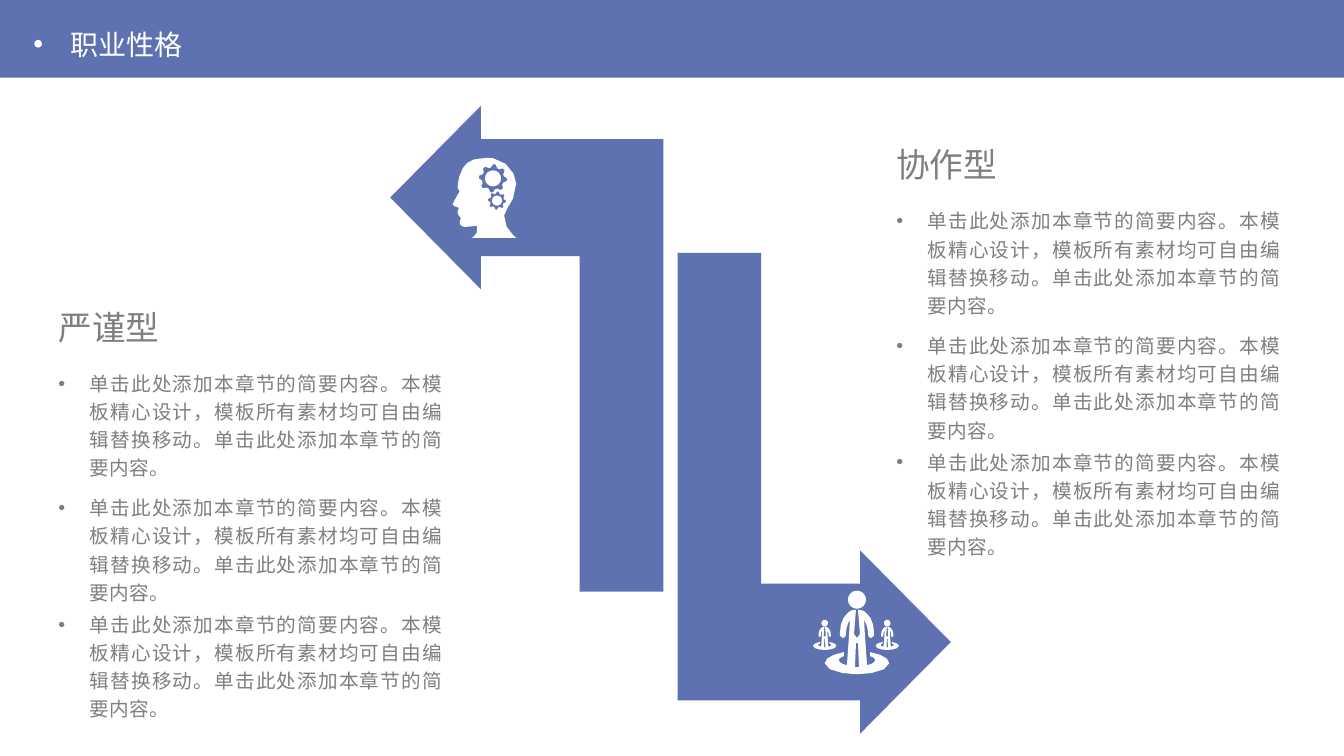
"""Build the slide on professional character with two turning arrows."""
from math import cos, pi, sin

from lxml.etree import SubElement as Sub
from pptx import Presentation
from pptx.dml.color import RGBColor as RGB
from pptx.enum.lang import MSO_LANGUAGE_ID as Lang
from pptx.enum.shapes import MSO_SHAPE as Kind
from pptx.enum.text import MSO_ANCHOR as Anchor, MSO_AUTO_SIZE as Auto, PP_ALIGN as Align
from pptx.oxml.ns import qn
from pptx.util import Inches, Pt

theme = {
    "blue": RGB(0x5E, 0x72, 0xB1), "white": RGB(255, 255, 255), "grey": RGB(0x7F, 0x7F, 0x7F),
    "font": "Noto Sans CJK SC", "title": 20, "head": 24, "body": 14,
}
cell = Inches(1)
cols, rows = 13.33, 7.5


def trace(steps, parts=3):
    """Turn corners (x, y) and cubic curves (six numbers) into points."""
    dots = [steps[0]]
    for step in steps[1:]:
        if len(step) == 2:
            dots.append(step)
            continue
        ends = [dots[-1], step[:2], step[2:4], step[4:]]
        for k in range(1, parts + 1):
            t = k / parts
            mix = ((1 - t) ** 3, 3 * t * (1 - t) ** 2, 3 * t * t * (1 - t), t ** 3)
            dots.append(tuple(sum(m * e[i] for m, e in zip(mix, ends)) for i in (0, 1)))
    return dots


def wheel(x, y, tip, root, teeth=4):
    """Return a gear outline, or a circle when both radii are equal."""
    count = 4 * teeth
    return [(x + r * cos(2 * pi * k / count), y + r * sin(2 * pi * k / count))
            for k in range(count) for r in [tip if k % 4 < 2 else root]]


deck = Presentation()
deck.slide_width, deck.slide_height = int(cols * cell), int(rows * cell)
page = deck.slides.add_slide(deck.slide_layouts.get_by_name("Comparison"))
for spot in list(page.placeholders):
    if spot.placeholder_format.idx > 4:
        spot.element.getparent().remove(spot.element)

band = page.shapes.add_shape(Kind.RECTANGLE, 0, 0, deck.slide_width, int(0.77 * cell))
band.shadow.inherit = False
band.fill.solid()
band.fill.fore_color.rgb = theme["blue"]
band.line.fill.background()
page.shapes._spTree.insert(2, band._element)

arrows = []
for side, edge, mid, tail in ((-1, 6.72, 6.37, 3.86), (1, 6.58, 1.96, 3.91)):
    bend = [(0, -0.58), (0, tail), (-0.83, tail), (-0.83, 0.58), (-1.81, 0.58),
            (-1.81, 0.91), (-2.71, 0), (-1.81, -0.91), (-1.81, -0.58)]
    arrows.append([[(edge + side * x, mid + side * y) for x, y in bend]])

face = trace([
    (4.79, 1.57), (4.82, 1.56, 4.85, 1.57, 4.89, 1.57), (5.04, 1.59, 5.12, 1.74, 5.12, 1.82),
    (5.12, 2, 5, 2.08, 5, 2.14), (4.99, 2.26, 5.12, 2.36, 5.12, 2.36), (4.68, 2.36),
    (4.68, 2.36, 4.76, 2.32, 4.73, 2.24), (4.71, 2.24, 4.67, 2.25, 4.63, 2.25),
    (4.6, 2.26, 4.57, 2.24, 4.56, 2.22), (4.56, 2.2, 4.57, 2.17, 4.57, 2.16),
    (4.56, 2.15, 4.53, 2.12, 4.54, 2.1), (4.55, 2.07, 4.55, 2.06, 4.55, 2.06),
    (4.55, 2.06, 4.5, 2.05, 4.49, 2.03), (4.49, 2.01, 4.56, 1.9, 4.56, 1.9),
    (4.56, 1.9, 4.54, 1.87, 4.54, 1.86), (4.54, 1.84, 4.54, 1.76, 4.59, 1.67),
    (4.62, 1.61, 4.69, 1.57, 4.79, 1.57)])
mind = [face]
for x, y, tip, root, bore in ((4.89, 1.77, 0.14, 0.11, 0.08), (4.93, 1.99, 0.09, 0.07, 0.05)):
    mind += [wheel(x, y, tip, root, 8), wheel(x, y, bore, bore)]

half = trace([
    (0, 0.47), (0.03, 0.43), (0.01, 0.19), (0.05, 0.19, 0.07, 0.2, 0.09, 0.22),
    (0.14, 0.26, 0.17, 0.33, 0.17, 0.43), (0.17, 0.45, 0.16, 0.46, 0.14, 0.47),
    (0.12, 0.47, 0.11, 0.45, 0.11, 0.43), (0.11, 0.37, 0.09, 0.32, 0.07, 0.29),
    (0.08, 0.46), (0.1, 0.74), (0.15, 0.73, 0.18, 0.71, 0.18, 0.69),
    (0.18, 0.67, 0.16, 0.66, 0.13, 0.65), (0.13, 0.61), (0.24, 0.63, 0.32, 0.67, 0.32, 0.72),
    (0.32, 0.79, 0.14, 0.83, 0, 0.83)])
man = [half + [(-x, y) for x, y in half[-2:0:-1]], wheel(0, 0.09, 0.09, 0.09),
       [(0.01, 0.52), (0.02, 0.76), (-0.02, 0.76), (-0.01, 0.52)]]
team = [[(left + size * x, top + size * y) for x, y in ring]
        for left, top, size in ((8.5, 5.86, 1), (8.18, 6.15, 0.36), (8.8, 6.15, 0.36))
        for ring in man]

for rings, tint in [(a, "blue") for a in arrows] + [(mind, "white"), (team, "white")]:
    pen = None
    for ring in rings:
        start, *rest = [(x * cell, y * cell) for x, y in ring]
        pen = pen.move_to(*start) if pen else page.shapes.build_freeform(*start)
        pen.add_line_segments(rest, close=True)
    form = pen.convert_to_shape()
    form.shadow.inherit = False
    form.fill.solid()
    form.fill.fore_color.rgb = theme[tint]
    form.line.fill.background()

note = "单击此处添加本章节的简要内容。本模板精心设计，模板所有素材均可自由编辑替换移动。单击此处添加本章节的简要内容。"
texts = [(0, ["职业性格"], (0.23, 0.22, 4.01, 0.44), "title", "white", 0.37)]
for idx, name, left, top in ((1, "严谨型", 0.48, 2.99), (3, "协作型", 8.79, 1.38)):
    texts += [(idx, [name], (left, top, 4.01, 0.58), "head", "grey", 0),
              (idx + 1, [note] * 3, (left, top + 0.6, 4.01, 3.6), "body", "grey", 0.31)]

gaps = (0, 8.3, 2.7)
for idx, lines, area, role, tint, hang in texts:
    spot = next(p for p in page.placeholders if p.placeholder_format.idx == idx)
    for key, val in zip(("left", "top", "width", "height"), area):
        setattr(spot, key, int(val * cell))
    frame = spot.text_frame
    frame.text = "\n".join(lines)
    look = {"word_wrap": True, "auto_size": Auto.NONE,
            "vertical_anchor": Anchor.MIDDLE if role == "title" else Anchor.TOP,
            "margin_left": cell // 10, "margin_right": cell // 10,
            "margin_top": cell // 20, "margin_bottom": cell // 20}
    for key, val in look.items():
        setattr(frame, key, val)
    for para, gap in zip(frame.paragraphs, gaps):
        flow = {"alignment": Align.JUSTIFY if role == "body" else Align.LEFT,
                "line_spacing": 1.2 if role == "body" else 1.0,
                "space_before": Pt(gap), "space_after": Pt(0)}
        for key, val in flow.items():
            setattr(para, key, val)
        props = para._p.get_or_add_pPr()
        props.set("marL", str(int(hang * cell)))
        props.set("indent", str(int(-hang * cell)))
        if hang:
            Sub(props, qn("a:buFont"), typeface="Arial")
            Sub(props, qn("a:buChar"), char="•")
        else:
            Sub(props, qn("a:buNone"))
        font = para.runs[0].font
        style = {"name": theme["font"], "size": Pt(theme[role]), "bold": False,
                 "language_id": Lang.SIMPLIFIED_CHINESE}
        for key, val in style.items():
            setattr(font, key, val)
        font.color.rgb = theme[tint]
        Sub(font._element, qn("a:ea"), typeface=theme["font"])
        if role == "body":
            font._element.set("spc", "30")

deck.save("out.pptx")
